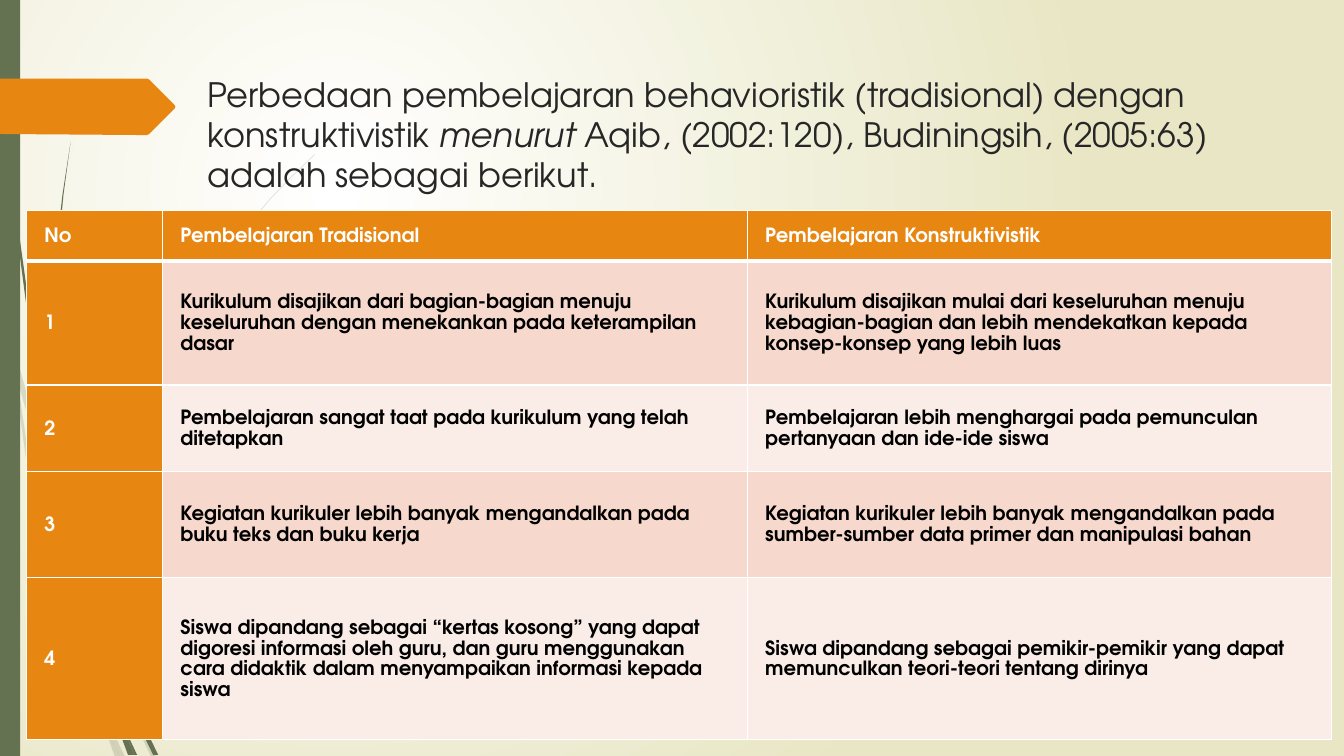
"""Build a slide comparing traditional and constructivist learning in a table."""
import pptx
import pptx.dml.color
import pptx.enum.text
import pptx.oxml
import pptx.util
from pptx.util import Inches

THEME = {
    "font": "TeX Gyre Adventor", "title_size": 24, "cell_size": 14,
    "title": "262626", "body": "000000", "white": "FFFFFF",
    "green": "647252", "orange": "E78712", "cream": "E8E6C4",
    "bands": ("F6D9CC", "FAEDE7"),
}
NS = 'xmlns:a="http://schemas.openxmlformats.org/drawingml/2006/main"'

TITLE = [
    ("Perbedaan pembelajaran behavioristik (tradisional) dengan konstruktivistik ", False),
    ("menurut ", True),
    ("Aqib, (2002:120), Budiningsih, (2005:63) adalah sebagai berikut.", False),
]
ROWS = [
    ("No", "Pembelajaran Tradisional", "Pembelajaran Konstruktivistik"),
    ("1",
     "Kurikulum disajikan dari bagian-bagian menuju keseluruhan dengan menekankan pada keterampilan dasar",
     "Kurikulum disajikan mulai dari keseluruhan menuju kebagian-bagian dan lebih mendekatkan kepada "
     "konsep-konsep yang lebih luas"),
    ("2",
     "Pembelajaran sangat taat pada kurikulum yang telah ditetapkan",
     "Pembelajaran lebih menghargai pada pemunculan pertanyaan dan ide-ide siswa"),
    ("3",
     "Kegiatan kurikuler lebih banyak mengandalkan pada buku teks dan buku kerja",
     "Kegiatan kurikuler lebih banyak mengandalkan pada sumber-sumber data primer dan manipulasi bahan"),
    ("4",
     "Siswa dipandang sebagai “kertas kosong” yang dapat digoresi informasi oleh guru, dan guru "
     "menggunakan cara didaktik dalam menyampaikan informasi kepada siswa",
     "Siswa dipandang sebagai pemikir-pemikir yang dapat memunculkan teori-teori tentang dirinya"),
]
COL_WIDTHS = (1.35, 5.8, 5.8)
ROW_HEIGHTS = (0.5, 1.23, 0.86, 1.05, 1.61)

# Outlines are x, y pairs in hundredths of an inch.
PALE_GRASS = [
    (11, 350, 9, 322, 0, 282, 0, 299, 10, 344),
    (58, 522, 84, 599, 85, 586, 62, 520, 14, 345, 17, 376),
    (92, 607, 88, 596, 88, 610, 123, 694, 150, 751, 155, 751, 127, 692),
    (119, 751, 124, 751, 105, 711),
    (93, 683, 70, 619, 31, 469, 17, 376, 11, 350, 28, 470, 65, 621, 92, 693, 101, 714, 99, 707),
    (84, 599, 87, 646, 93, 683, 96, 692, 105, 711, 103, 706, 91, 646, 88, 610, 88, 608),
    (88, 584, 110, 462, 160, 349, 229, 245, 268, 198, 290, 175, 312, 154, 312, 153, 289, 175,
     268, 197, 228, 244, 158, 348, 107, 461, 85, 584, 85, 586, 88, 596),
    (101, 714, 114, 751, 119, 751),
    (88, 608, 88, 610, 88, 596, 85, 586, 84, 599),
    (96, 692, 93, 683, 99, 707, 101, 714, 119, 751, 105, 711),
]
DARK_GRASS = [
    (7, 110, 17, 233, 33, 355, 56, 477, 57, 481, 55, 457, 55, 453, 36, 355, 19, 232, 8, 109,
     5, 48, 4, 0, 3, 0, 4, 48),
    (88, 592, 106, 645, 106, 633, 106, 631, 93, 590, 60, 472, 64, 505),
    (113, 649, 110, 641, 111, 656, 132, 708, 152, 749, 157, 749, 136, 706),
    (110, 691, 98, 657, 72, 556, 64, 505, 57, 477, 68, 557, 93, 659, 111, 708, 117, 722, 116, 717),
    (60, 472, 58, 453, 54, 349, 58, 245, 63, 193, 70, 141, 62, 193, 56, 245, 52, 349, 55, 449),
    (133, 749, 136, 749, 122, 719),
    (57, 477, 64, 505, 60, 472, 55, 449, 55, 453),
    (111, 633, 125, 552, 158, 476, 205, 406, 231, 374, 245, 359, 261, 344, 260, 344, 245, 358,
     231, 373, 204, 405, 156, 474, 122, 551, 106, 631, 110, 641),
    (117, 722, 127, 749, 131, 749),
    (106, 645, 110, 691, 116, 706, 122, 719, 121, 716, 111, 656, 109, 651),
    (106, 645, 109, 651, 111, 656, 110, 641, 106, 631, 106, 633),
    (116, 706, 110, 691, 116, 717, 117, 722, 130, 749, 133, 749, 122, 719),
]
SIDE_BAR = (0, 0, 20, 750)
ARROW = (173, 108, 148, 133, 146, 134, 136, 134, 0, 133, 0, 78, 136, 78, 146, 78, 148, 79,
         173, 104, 174, 106)


def rgb(name):
    return pptx.dml.color.RGBColor.from_string(name)


def paint(sp, color, alpha=None):
    sp.shadow.inherit = False
    sp.fill.solid()
    sp.fill.fore_color.rgb = rgb(color)
    sp.line.fill.background()
    if alpha:
        clr = sp.fill._xPr.find(".//{*}srgbClr")
        clr.append(pptx.oxml.parse_xml(f'<a:alpha {NS} val="{alpha * 1000}"/>'))


def add_outline(shapes, outline, color, alpha=None):
    points = list(zip(outline[::2], outline[1::2]))
    builder = shapes.build_freeform(*points[0], scale=Inches(0.01))
    builder.add_line_segments(points[1:], close=True)
    paint(builder.convert_to_shape(), color, alpha)


def add_text(p, text, *, size, color, bold=False, italic=False):
    r = p.add_run()
    r.text = text
    r.font.name = THEME["font"]
    r.font.size = pptx.util.Pt(size)
    r.font.color.rgb = rgb(color)
    r.font.bold = bold
    r.font.italic = italic


def set_borders(cell, **widths):
    for i, (side, width) in enumerate(widths.items()):
        cell._tc.get_or_add_tcPr().insert(i, pptx.oxml.parse_xml(
            f'<a:ln{side} {NS} w="{pptx.util.Pt(width)}"><a:solidFill>'
            f'<a:srgbClr val="{THEME["white"]}"/></a:solidFill></a:ln{side}>'))


def add_background(s):
    fill = s.background.fill
    fill.gradient()
    for stop, name in zip(fill.gradient_stops, ("white", "cream")):
        stop.color.rgb = rgb(THEME[name])
    lin = s.element.find(".//{*}bgPr//{*}lin")
    lin.getparent().replace(lin, pptx.oxml.parse_xml(
        f'<a:path {NS} path="circle"><a:fillToRect l="50000" t="50000" r="100000" b="100000"/></a:path>'))


def add_decoration(s):
    for outlines, alpha in ((PALE_GRASS, 20), (DARK_GRASS, None)):
        group = s.shapes.add_group_shape()
        for outline in outlines:
            add_outline(group.shapes, outline, THEME["green"], alpha)
    box = [Inches(n / 100) for n in SIDE_BAR]
    paint(s.shapes.add_shape(pptx.enum.shapes.MSO_SHAPE.RECTANGLE, *box), THEME["green"])
    add_outline(s.shapes, ARROW, THEME["orange"])


def add_title(s):
    tf = s.shapes.add_textbox(Inches(1.96), Inches(0.68), Inches(10.96), Inches(1.29)).text_frame
    tf.word_wrap = True
    for text, italic in TITLE:
        add_text(tf.paragraphs[0], text, size=THEME["title_size"], color=THEME["title"], italic=italic)


def add_comparison(s):
    table = s.shapes.add_table(len(ROWS), len(COL_WIDTHS), Inches(0.26), Inches(2.09),
                               Inches(sum(COL_WIDTHS)), Inches(sum(ROW_HEIGHTS))).table
    for column, width in zip(table.columns, COL_WIDTHS):
        column.width = Inches(width)
    for row, height in zip(table.rows, ROW_HEIGHTS):
        row.height = Inches(height)
    for i, texts in enumerate(ROWS):
        for j, text in enumerate(texts):
            cell = table.cell(i, j)
            accent = i == 0 or j == 0
            cell.fill.solid()
            cell.fill.fore_color.rgb = rgb(THEME["orange"] if accent else THEME["bands"][(i - 1) % 2])
            set_borders(cell, L=1, R=1, T=3 if i == 1 else 1, B=3 if i == 0 else 1)
            cell.vertical_anchor = pptx.enum.text.MSO_ANCHOR.MIDDLE
            cell.margin_left = cell.margin_right = Inches(0.18)
            cell.margin_top = cell.margin_bottom = Inches(0.07)
            p = cell.text_frame.paragraphs[0]
            p.line_spacing = 1.15
            add_text(p, text, size=THEME["cell_size"], bold=True,
                     color=THEME["white"] if accent else THEME["body"])


def main():
    prs = pptx.Presentation()
    prs.slide_width, prs.slide_height = Inches(13.33), Inches(7.5)
    s = prs.slides.add_slide(prs.slide_layouts[6])
    add_background(s)
    add_decoration(s)
    add_title(s)
    add_comparison(s)
    prs.save("out.pptx")


if __name__ == "__main__":
    main()
